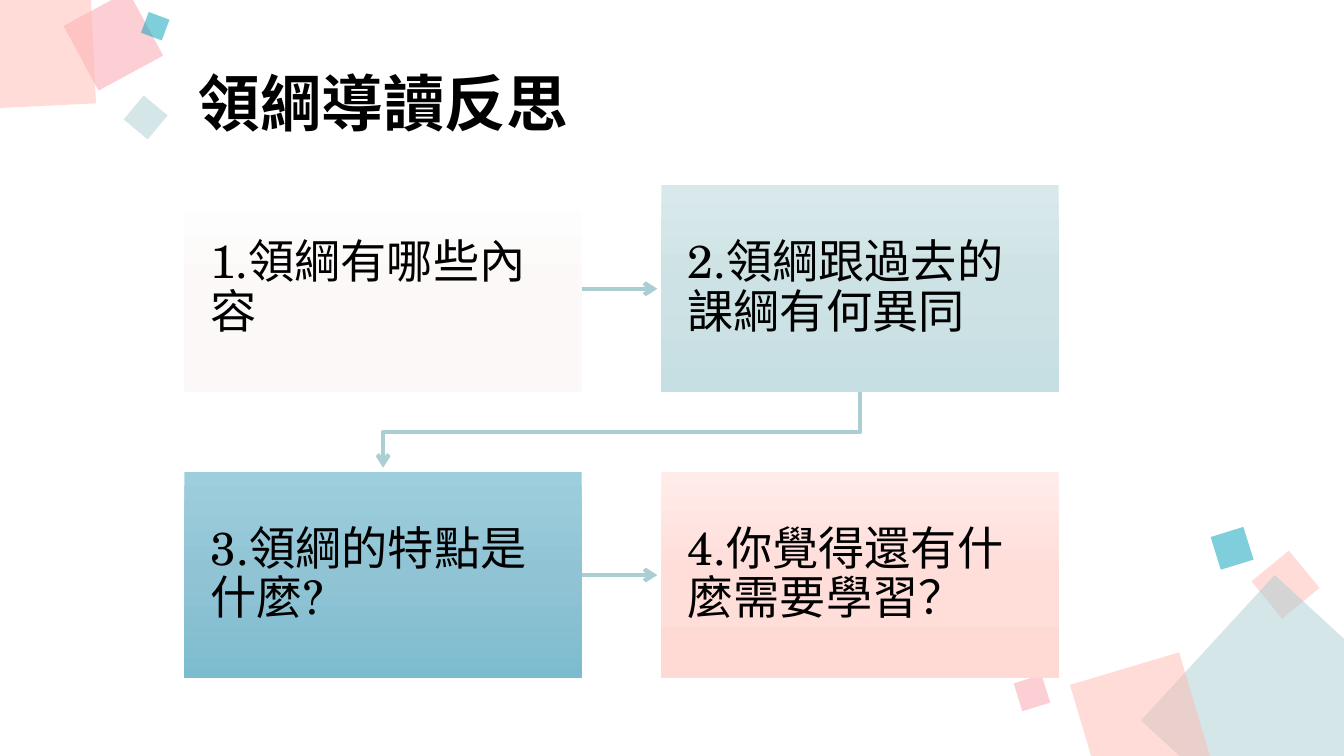
from copy import deepcopy

from lxml.etree import SubElement
from pptx import Presentation
from pptx.dml.color import RGBColor
from pptx.enum.shapes import MSO_CONNECTOR, MSO_SHAPE
from pptx.enum.text import MSO_ANCHOR, PP_ALIGN
from pptx.oxml.ns import qn
from pptx.util import Inches, Pt

BLACK = RGBColor(0x00, 0x00, 0x00)
PEACH = RGBColor(0xFF, 0xBB, 0xB3)
PINK = RGBColor(0xFA, 0xA0, 0xAA)
MIST = RGBColor(0xAA, 0xCE, 0xD2)
TEAL = RGBColor(0x00, 0x9F, 0xB8)
WHITE_FADE = (RGBColor(0xFF, 0xFF, 0xFF), RGBColor(0xFC, 0xF8, 0xF8), RGBColor(0xFC, 0xF7, 0xF7))
MIST_FADE = (RGBColor(0xD9, 0xE9, 0xEB), RGBColor(0xCD, 0xE2, 0xE4), RGBColor(0xC6, 0xDF, 0xE2))
BLUE_FADE = (RGBColor(0x9D, 0xCE, 0xDE), RGBColor(0x90, 0xC4, 0xD4), RGBColor(0x7C, 0xBC, 0xCF))
PEACH_FADE = (RGBColor(0xFF, 0xEC, 0xEA), RGBColor(0xFF, 0xDD, 0xD9), RGBColor(0xFF, 0xD9, 0xD4))

CJK_FONT = "Noto Sans CJK SC"
TITLE_FONT = {"size": Pt(44), "name": CJK_FONT, "bold": True}
CARD_FONT = {"size": Pt(33), "name": "TeX Gyre Schola", "bold": False}
CARD_MARGINS = {f"margin_{side}": Inches(0.26) for side in ("left", "top", "right", "bottom")}

# Left, top, side, rotation, colour
CONFETTI = [
    (12.51, 5.56, 0.48, 320.6, PEACH),
    (11.72, 6.11, 1.96, 42.6, MIST),
    (10.75, 6.61, 1.13, 343.4, PEACH),
    (10.09, 6.73, 0.29, 342.8, PINK),
    (12.05, 5.27, 0.34, 342.8, TEAL),
    (0.76, 0.04, 0.73, 331.6, PINK),
    (-0.46, -0.32, 1.38, 357.2, PEACH),
    (1.29, 1.01, 0.31, 309.8, MIST),
    (1.43, 0.15, 0.22, 290.5, TEAL),
]
QUESTIONS = [
    ("1.領綱有哪些內容", WHITE_FADE),
    ("2.領綱跟過去的課綱有何異同", MIST_FADE),
    ("3.領綱的特點是什麼?", BLUE_FADE),
    ("4.你覺得還有什麼需要學習？", PEACH_FADE),
]
CARD_LEFT, CARD_TOP = 1.83, 1.84
CARD_WIDTH, CARD_HEIGHT = 3.94, 2.05
COLUMN_STEP, ROW_STEP = 4.73, 2.84
ARROW_LENGTH = 0.75


def apply(target, formats):
    for attribute, value in formats.items():
        setattr(target, attribute, value)


class SlideBuilder:
    def __init__(self, slide, line_color=MIST, line_width=Pt(3)):
        self.shapes = slide.shapes
        self.line_color = line_color
        self.line_width = line_width

    def rectangle(self, left, top, width, height):
        shape = self.shapes.add_shape(
            MSO_SHAPE.RECTANGLE, Inches(left), Inches(top), Inches(width), Inches(height))
        shape.shadow.inherit = False
        shape.line.fill.background()
        return shape

    def confetti(self, left, top, side, rotation, color):
        """Add a half-transparent, turned square."""
        square = self.rectangle(left, top, side, side)
        square.rotation = rotation
        square.fill.solid()
        square.fill.fore_color.rgb = color
        tint = square._element.spPr.find(f".//{qn('a:srgbClr')}")
        SubElement(tint, qn("a:alpha"), val="50000")

    def set_text(self, frame, text, font_formats, margins, space_before=0):
        apply(frame, {"word_wrap": True, "vertical_anchor": MSO_ANCHOR.MIDDLE, **margins})
        paragraph = frame.paragraphs[0]
        apply(paragraph, {"alignment": PP_ALIGN.LEFT, "line_spacing": 0.9,
                          "space_before": Pt(space_before)})
        run = paragraph.add_run()
        run.text = text
        apply(run.font, font_formats)
        run.font.color.rgb = BLACK
        SubElement(run._r.get_or_add_rPr(), qn("a:ea"), typeface=CJK_FONT)

    def title(self, text, left, top, width, height):
        box = self.shapes.add_textbox(Inches(left), Inches(top), Inches(width), Inches(height))
        self.set_text(box.text_frame, text, TITLE_FONT, {}, space_before=10)

    def card(self, text, fade, left, top):
        card = self.rectangle(left, top, CARD_WIDTH, CARD_HEIGHT)
        card.fill.gradient()
        card.fill.gradient_angle = 270
        first_stop = card._element.spPr.find(f".//{qn('a:gs')}")
        first_stop.addnext(deepcopy(first_stop))
        for stop, position, color in zip(card.fill.gradient_stops, (0, 0.5, 1), fade):
            stop.position = position
            stop.color.rgb = color
        self.set_text(card.text_frame, text, CARD_FONT, CARD_MARGINS)

    def style_arrow(self, arrow):
        arrow.line.color.rgb = self.line_color
        arrow.line.width = self.line_width
        SubElement(arrow._element.spPr.find(qn("a:ln")), qn("a:tailEnd"), type="arrow")

    def straight_arrow(self, left, y):
        arrow = self.shapes.add_connector(
            MSO_CONNECTOR.STRAIGHT, Inches(left), Inches(y),
            Inches(left + ARROW_LENGTH), Inches(y))
        self.style_arrow(arrow)
        SubElement(arrow._element.spPr, qn("a:effectLst"))

    def bent_arrow(self, points):
        start, *corners = [(Inches(x), Inches(y)) for x, y in points]
        outline = self.shapes.build_freeform(*start)
        outline.add_line_segments(corners, close=False)
        arrow = outline.convert_to_shape()
        arrow.fill.background()
        self.style_arrow(arrow)
        arrow.shadow.inherit = False


def main():
    presentation = Presentation()
    presentation.slide_width = Inches(13.33)
    presentation.slide_height = Inches(7.5)
    builder = SlideBuilder(presentation.slides.add_slide(presentation.slide_layouts[6]))

    for square in CONFETTI:
        builder.confetti(*square)
    builder.title("領綱導讀反思", 1.87, 0.14, 6.13, 1.84)

    for index, (question, fade) in enumerate(QUESTIONS):
        row, column = divmod(index, 2)
        top = CARD_TOP + row * ROW_STEP
        builder.card(question, fade, CARD_LEFT + column * COLUMN_STEP, top)
        if column == 0:
            builder.straight_arrow(CARD_LEFT + CARD_WIDTH, top + CARD_HEIGHT / 2)

    first_center = CARD_LEFT + CARD_WIDTH / 2
    second_center = first_center + COLUMN_STEP
    first_row_bottom = CARD_TOP + CARD_HEIGHT
    turn = (first_row_bottom + CARD_TOP + ROW_STEP) / 2
    builder.bent_arrow([
        (second_center, first_row_bottom), (second_center, turn),
        (first_center, turn), (first_center, first_row_bottom + ARROW_LENGTH)])

    presentation.save("out.pptx")


if __name__ == "__main__":
    main()
